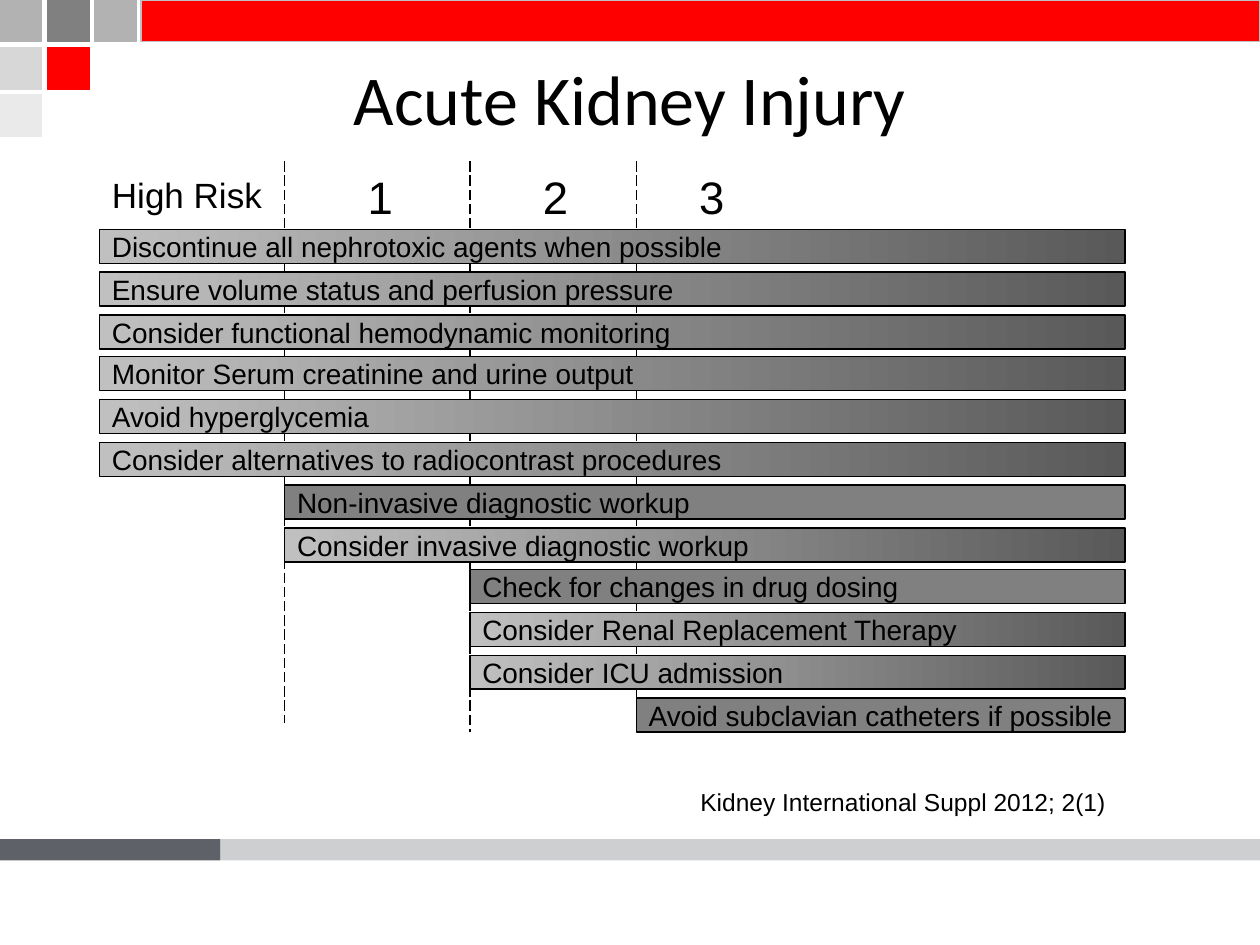
"""Build the slide on staged care for acute kidney injury."""
from dataclasses import dataclass
from typing import Any, Optional

from lxml.etree import SubElement
from pptx import Presentation
from pptx.dml.color import RGBColor
from pptx.enum.dml import MSO_LINE
from pptx.enum.shapes import MSO_CONNECTOR, MSO_SHAPE
from pptx.enum.text import MSO_ANCHOR, PP_ALIGN
from pptx.oxml.ns import qn
from pptx.util import Pt

SCALE = 9144


@dataclass(frozen=True)
class Theme:
    ink: str = "000000"
    red: str = "FF0000"
    trim: str = "C0C0C0"
    slate: str = "5F6168"
    gray: str = "808080"
    pale: str = "C0C0C0"
    dark: str = "595959"
    silver: str = "B2B2B2"
    light: str = "D7D7D7"
    faint: str = "EAEAEA"
    head: int = 40
    stage: int = 26
    risk: int = 20
    row: int = 16
    note: int = 14
    face: str = "Arial"
    display: str = "Calibri"
    stroke: float = 0.75


THEME = Theme()


@dataclass(frozen=True)
class Box:
    left: int
    top: int
    width: int
    height: int

    def emu(self) -> tuple[int, ...]:
        return tuple(v * SCALE for v in (self.left, self.top, self.width, self.height))


@dataclass(frozen=True)
class Tile:
    col: int
    row: int
    color: str


@dataclass(frozen=True)
class Step:
    text: str
    stage: int
    solid: bool = False


@dataclass(frozen=True)
class Label:
    text: str
    box: Box
    size: int
    face: str = THEME.face
    align: PP_ALIGN = PP_ALIGN.LEFT
    anchor: MSO_ANCHOR = MSO_ANCHOR.TOP
    wrap: bool = False


TILES = [
    Tile(0, 0, THEME.silver), Tile(1, 0, THEME.gray), Tile(2, 0, THEME.silver),
    Tile(0, 1, THEME.light), Tile(1, 1, THEME.red), Tile(0, 2, THEME.faint),
]
STAGES = [79, 226, 373, 505]
RIGHT = 893
ENDS = [574, 581, 581]
STEPS = [
    Step("Discontinue all nephrotoxic agents when possible", 0),
    Step("Ensure volume status and perfusion pressure", 0),
    Step("Consider functional hemodynamic monitoring", 0),
    Step("Monitor Serum creatinine and urine output", 0),
    Step("Avoid hyperglycemia", 0),
    Step("Consider alternatives to radiocontrast procedures", 0),
    Step("Non-invasive diagnostic workup", 1, True),
    Step("Consider invasive diagnostic workup", 1),
    Step("Check for changes in drug dosing", 2, True),
    Step("Consider Renal Replacement Therapy", 2),
    Step("Consider ICU admission", 2),
    Step("Avoid subclavian catheters if possible", 3, True),
]
LABELS = [
    Label("Acute Kidney Injury", Box(100, 38, 800, 78), THEME.head, THEME.display,
          PP_ALIGN.CENTER, MSO_ANCHOR.MIDDLE, True),
    Label("High Risk", Box(79, 133, 175, 35), THEME.risk),
    *[Label(str(n), Box(left, 129, 50, 44), THEME.stage)
      for n, left in enumerate([282, 421, 545], 1)],
    Label("Kidney International Suppl 2012; 2(1)", Box(546, 620, 388, 34),
          THEME.note, wrap=True),
]


def tint(code: str) -> RGBColor:
    return RGBColor.from_string(code)


def apply(item: Any, values: dict[str, Any]) -> None:
    for name, value in values.items():
        setattr(item, name, value)


def write(shape: Any, label: Label) -> None:
    frame = shape.text_frame
    apply(frame, {"word_wrap": label.wrap, "vertical_anchor": label.anchor})
    para = frame.paragraphs[0]
    apply(para, {"text": label.text, "alignment": label.align})
    font = para.runs[0].font
    apply(font, {"name": label.face, "size": Pt(label.size)})
    font.color.rgb = tint(THEME.ink)


def block(slide: Any, box: Box, color: str, edge: Optional[str] = None) -> Any:
    shape = slide.shapes.add_shape(MSO_SHAPE.RECTANGLE, *box.emu())
    shape.shadow.inherit = False
    shape.fill.solid()
    shape.fill.fore_color.rgb = tint(color)
    if edge:
        shape.line.color.rgb = tint(edge)
        shape.line.width = Pt(THEME.stroke)
    else:
        shape.line.fill.background()
    return shape


def blend(shape: Any) -> None:
    shape.fill.gradient()
    shape.fill.gradient_angle = 0
    pairs = zip(shape.fill.gradient_stops, (THEME.pale, THEME.dark))
    for place, (stop, color) in enumerate(pairs):
        stop.position = place
        stop.color.rgb = tint(color)


def rule(slide: Any, left: int, top: int, end: int) -> None:
    points = [v * SCALE for v in (left, top, left, end)]
    line = slide.shapes.add_connector(MSO_CONNECTOR.STRAIGHT, *points)
    line.line.color.rgb = tint(THEME.ink)
    apply(line.line, {"width": Pt(THEME.stroke), "dash_style": MSO_LINE.LONG_DASH})
    SubElement(line._element.spPr, qn("a:effectLst"))


def frame(slide: Any) -> None:
    for tile in TILES:
        box = Box(round(tile.col * 37.5), round(tile.row * 37.5), 33, 33)
        block(slide, box, tile.color, tile.color)
    block(slide, Box(112, 0, 888, 33), THEME.red, THEME.trim)
    block(slide, Box(0, 666, 175, 17), THEME.slate)
    strip = block(slide, Box(175, 666, 825, 17), THEME.slate)
    color = strip._element.spPr.find(f"{qn('a:solidFill')}/{qn('a:srgbClr')}")
    SubElement(color, qn("a:alpha"), val="30000")


def bar(slide: Any, place: int, step: Step) -> None:
    left = STAGES[step.stage]
    box = Box(left, round(182 + place * 33.8), RIGHT - left, 27)
    shape = block(slide, box, THEME.gray, THEME.ink)
    if not step.solid:
        blend(shape)
    write(shape, Label(step.text, box, THEME.row, anchor=MSO_ANCHOR.MIDDLE))


def main() -> None:
    deck = Presentation()
    apply(deck, {"slide_width": 1000 * SCALE, "slide_height": 750 * SCALE})
    slide = deck.slides.add_slide(deck.slide_layouts[6])
    frame(slide)
    for left, end in zip(STAGES[1:], ENDS):
        rule(slide, left, 128, end)
    for place, step in enumerate(STEPS):
        bar(slide, place, step)
    for label in LABELS:
        write(slide.shapes.add_textbox(*label.box.emu()), label)
    deck.save("out.pptx")


if __name__ == "__main__":
    main()
